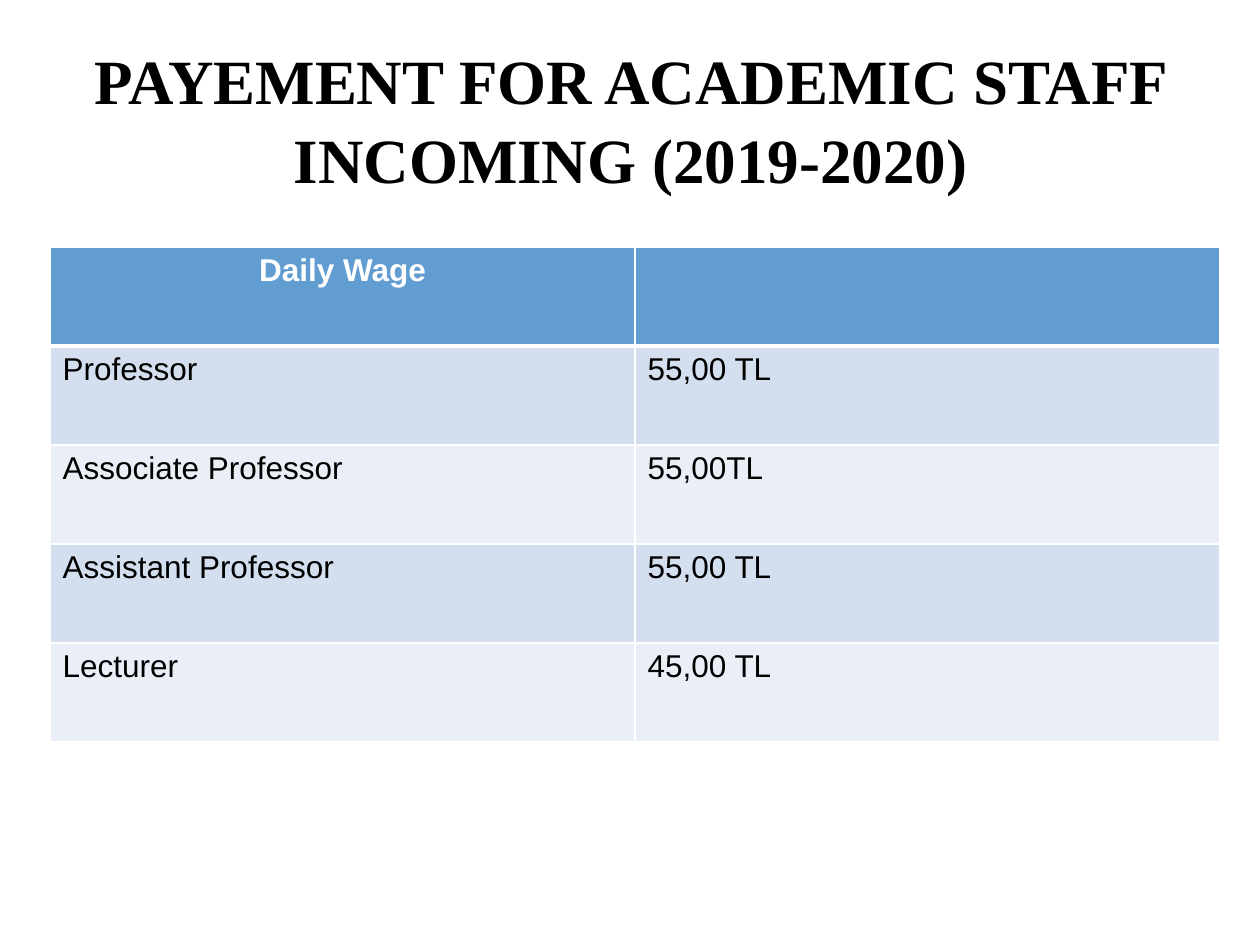
from dataclasses import dataclass

from lxml import etree
from pptx import Presentation
from pptx.dml.color import RGBColor
from pptx.enum.text import MSO_ANCHOR, PP_ALIGN
from pptx.oxml.ns import qn
from pptx.util import Pt

CENTER, LEFT = PP_ALIGN.CENTER, PP_ALIGN.LEFT
MIDDLE = MSO_ANCHOR.MIDDLE

TITLE = "PAYEMENT FOR ACADEMIC STAFF INCOMING (2019-2020)"
WAGES = [
    ("Daily Wage", ""),
    ("Professor", "55,00 TL"),
    ("Associate Professor", "55,00TL"),
    ("Assistant Professor", "55,00 TL"),
    ("Lecturer", "45,00 TL"),
]


@dataclass(frozen=True)
class Theme:
    ink: str = "000000"
    paper: str = "FFFFFF"
    header: str = "629DD1"
    bands: tuple = ("D3DFEE", "EAEFF7")
    title_font: str = "Times New Roman"
    body_font: str = "Arial"
    title_size: int = 36
    body_size: int = 18
    thin: int = 1
    thick: int = 3


THEME = Theme()
PAGE = (1260, 945)
TITLE_BOX = (20, 38, 1221, 158)
TABLE_LEFT, TABLE_TOP = 50, 247
COLUMN_WIDTH, ROW_HEIGHT = 585, 99
TITLE_FORMAT = {"name": THEME.title_font, "size": Pt(THEME.title_size), "bold": True}
BODY_FORMAT = {"name": THEME.body_font, "size": Pt(THEME.body_size)}


def px(length):
    return round(length * 914400 / 126)


def write(para, text, color, align, font_format):
    para.alignment = align
    span = para.add_run()
    span.text = text
    for name, value in font_format.items():
        setattr(span.font, name, value)
    span.font.color.rgb = RGBColor.from_string(color)


def add_borders(cell, bottom):
    properties = cell._tc.get_or_add_tcPr()
    widths = {"lnL": THEME.thin, "lnR": THEME.thin, "lnT": THEME.thin, "lnB": bottom}
    for position, (side, width) in enumerate(widths.items()):
        line = etree.Element(qn(f"a:{side}"), w=str(Pt(width)))
        fill = etree.SubElement(line, qn("a:solidFill"))
        etree.SubElement(fill, qn("a:srgbClr"), val=THEME.paper)
        properties.insert(position, line)


def add_title(page):
    frame = page.shapes.add_textbox(*map(px, TITLE_BOX)).text_frame
    frame_format = {
        "word_wrap": True,
        "vertical_anchor": MIDDLE,
        "margin_top": 0,
        "margin_bottom": 0,
    }
    for name, value in frame_format.items():
        setattr(frame, name, value)
    para = frame.paragraphs[0]
    para.line_spacing = 1.05
    write(para, TITLE, THEME.ink, CENTER, TITLE_FORMAT)


def add_wages(page):
    rows, columns = len(WAGES), len(WAGES[0])
    size = (COLUMN_WIDTH * columns, ROW_HEIGHT * rows)
    table = page.shapes.add_table(
        rows, columns, *map(px, (TABLE_LEFT, TABLE_TOP, *size))
    ).table
    for row, texts in enumerate(WAGES):
        is_header = row == 0
        fill = THEME.header if is_header else THEME.bands[(row - 1) % 2]
        color = THEME.paper if is_header else THEME.ink
        align = CENTER if is_header else LEFT
        bottom = THEME.thick if is_header else THEME.thin
        for column, text in enumerate(texts):
            cell = table.cell(row, column)
            cell.fill.solid()
            cell.fill.fore_color.rgb = RGBColor.from_string(fill)
            add_borders(cell, bottom)
            if text:
                font_format = {**BODY_FORMAT, "bold": is_header}
                write(cell.text_frame.paragraphs[0], text, color, align, font_format)


def main():
    deck = Presentation()
    deck.slide_width, deck.slide_height = map(px, PAGE)
    page = deck.slides.add_slide(deck.slide_layouts[6])
    add_title(page)
    add_wages(page)
    deck.save("out.pptx")


if __name__ == "__main__":
    main()
